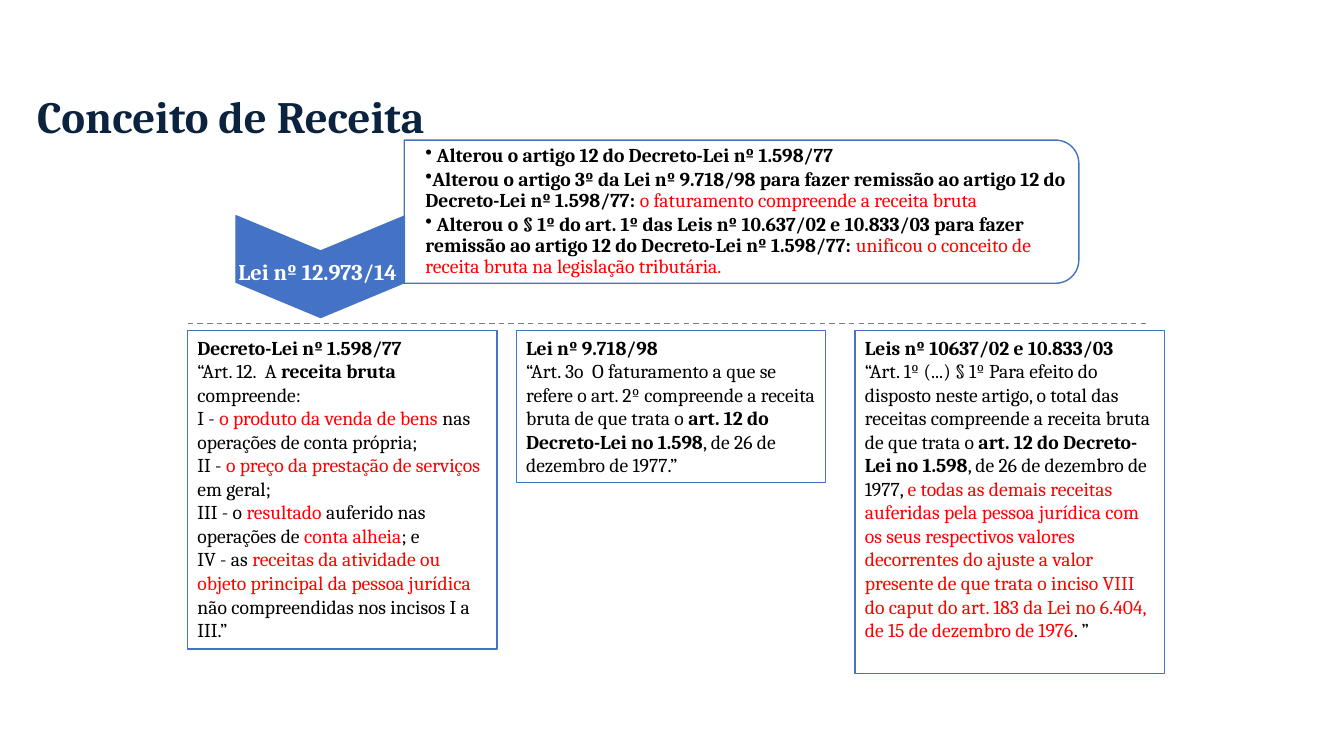
import math
from dataclasses import dataclass

from lxml import etree
from pptx import Presentation
from pptx import util as u
from pptx.dml.color import RGBColor
from pptx.enum import dml, shapes, text
from pptx.oxml import ns


@dataclass(frozen=True)
class Theme:
    font: str = "Cambria"
    navy: str = "0B233F"
    blue: str = "4472C4"
    gray: str = "7C7C7C"
    black: str = "000000"
    white: str = "FFFFFF"
    red: str = "FF0000"
    title_size: int = 32
    label_size: int = 16
    body_size: int = 14
    line_width: int = 1


THEME = Theme()


def bold(content):
    return content, {"bold": True}


def plain(content):
    return content, {}


def red(content):
    return content, {"color": THEME.red}


AMENDMENTS = [
    [bold(" Alterou o artigo 12 do Decreto-Lei nº 1.598/77")],
    [bold("Alterou o artigo 3º da Lei nº 9.718/98 para fazer remissão ao artigo 12 do Decreto-Lei nº 1.598/77: "),
     red("o faturamento compreende a receita bruta")],
    [bold(" Alterou o § 1º do art. 1º das Leis nº 10.637/02 e 10.833/03 para fazer remissão ao artigo 12 do Decreto-Lei nº 1.598/77: "),
     red("unificou o conceito de receita bruta na legislação tributária.")],
]

DECREE_LAW = [
    [bold("Decreto-Lei nº 1.598/77")],
    [plain("“Art. 12.  A "), bold("receita bruta "), plain("compreende:")],
    [plain("I - "), red("o produto da venda de bens "), plain("nas operações de conta própria;")],
    [plain("II - "), red("o preço da prestação de serviços "), plain("em geral;")],
    [plain("III - o "), red("resultado"), plain(" auferido nas operações de "),
     red("conta alheia"), plain("; e")],
    [plain("IV - as "), red("receitas da atividade ou objeto principal da pessoa jurídica"),
     plain(" não compreendidas nos incisos I a III.”")],
]

LAW_9718 = [
    [bold("Lei nº 9.718/98")],
    [plain("“Art. 3o  O faturamento a que se refere o art. 2º compreende a receita bruta de que trata o "),
     bold("art. 12 do Decreto-Lei no 1.598"), plain(", de 26 de dezembro de 1977.”")],
]

LAWS_10637_10833 = [
    [bold("Leis nº 10637/02 e 10.833/03")],
    [plain("“Art. 1º (...) § 1º Para efeito do disposto neste artigo, o total das receitas compreende a receita bruta de que trata o "),
     bold("art. 12 do Decreto-Lei no 1.598"), plain(", de 26 de dezembro de 1977, "),
     red("e todas as demais receitas auferidas pela pessoa jurídica com os seus respectivos valores decorrentes do ajuste a valor presente de que trata o inciso VIII do caput do art. 183 da Lei no 6.404, de 15 de dezembro de 1976"),
     plain(". ”")],
]


def write_text(shape, paragraphs, size=THEME.body_size, color=THEME.black,
               align=text.PP_ALIGN.LEFT, anchor=text.MSO_ANCHOR.TOP,
               insets=(0.1, 0.05, 0.1, 0.05), line_spacing=1.0, space_after=0, bullet=None):
    frame = shape.text_frame
    frame.word_wrap = True
    frame.vertical_anchor = anchor
    (frame.margin_left, frame.margin_top,
     frame.margin_right, frame.margin_bottom) = map(u.Inches, insets)
    for index, runs in enumerate(paragraphs):
        paragraph = frame.add_paragraph() if index else frame.paragraphs[0]
        paragraph.alignment = align
        paragraph.line_spacing = line_spacing
        paragraph.space_after = u.Pt(space_after)
        if bullet:
            properties = paragraph._p.get_or_add_pPr()
            properties.set("marL", "0")
            properties.set("indent", "0")
            etree.SubElement(properties, ns.qn("a:buChar")).set("char", bullet)
        for content, style in runs:
            run = paragraph.add_run()
            run.text = content
            run.font.name = THEME.font
            run.font.size = u.Pt(size)
            run.font.bold = style.get("bold", False)
            run.font.color.rgb = RGBColor.from_string(style.get("color", color))


def paint(shape, fill, opacity=100):
    shape.shadow.inherit = False
    shape.fill.solid()
    shape.fill.fore_color.rgb = RGBColor.from_string(fill)
    if opacity < 100:
        color = shape._element.spPr.find(".//" + ns.qn("a:srgbClr"))
        etree.SubElement(color, ns.qn("a:alpha")).set("val", str(opacity * 1000))
    shape.line.color.rgb = RGBColor.from_string(THEME.blue)
    shape.line.width = u.Pt(THEME.line_width)


def add_outline(slide, points, fill, opacity=100):
    corners = [(u.Inches(x), u.Inches(y)) for x, y in points]
    builder = slide.shapes.build_freeform(*corners[0])
    builder.add_line_segments(corners[1:], close=True)
    shape = builder.convert_to_shape()
    paint(shape, fill, opacity)
    return shape


def add_chevron(slide, left, top, width, height, notch):
    right, middle, bottom = left + width, left + width / 2, top + height
    points = [(left, top), (middle, top + notch), (right, top),
              (right, bottom - notch), (middle, bottom), (left, bottom - notch)]
    return add_outline(slide, points, THEME.blue)


def add_right_rounded_panel(slide, left, top, width, height, radius, steps=16):
    right, bottom = left + width, top + height
    angles = [math.pi / 2 * step / steps for step in range(steps + 1)]
    upper = [(right - radius + radius * math.sin(angle),
              top + radius - radius * math.cos(angle)) for angle in angles]
    lower = [(x, top + bottom - y) for x, y in reversed(upper)]
    return add_outline(slide, [(left, top), *upper, *lower, (left, bottom)], THEME.white, 90)


def add_label(slide, left, top, width, height, content, **style):
    box = slide.shapes.add_textbox(*map(u.Inches, (left, top, width, height)))
    write_text(box, [[bold(content)]], line_spacing=0.9, **style)


def add_law_box(slide, left, top, width, height, paragraphs):
    box = slide.shapes.add_shape(shapes.MSO_SHAPE.RECTANGLE,
                                 *map(u.Inches, (left, top, width, height)))
    paint(box, THEME.white)
    write_text(box, paragraphs)


def add_divider(slide, left, right, y):
    line = slide.shapes.add_connector(shapes.MSO_CONNECTOR.STRAIGHT,
                                      *map(u.Inches, (left, y, right, y)))
    line.line.color.rgb = RGBColor.from_string(THEME.gray)
    line.line.width = u.Pt(THEME.line_width)
    line.line.dash_style = dml.MSO_LINE.DASH
    etree.SubElement(line._element.spPr, ns.qn("a:effectLst"))


def main():
    presentation = Presentation()
    presentation.slide_width = u.Inches(13.33)
    presentation.slide_height = u.Inches(7.5)
    slide = presentation.slides.add_slide(presentation.slide_layouts[6])

    add_chevron(slide, 2.34, 2.14, 1.68, 1.01, notch=0.35)
    panel = add_right_rounded_panel(slide, 4.01, 1.39, 6.69, 1.42, radius=0.23)
    write_text(panel, AMENDMENTS, anchor=text.MSO_ANCHOR.MIDDLE,
               insets=(0.21, 0.07, 0.07, 0.07), line_spacing=0.9, space_after=2.1, bullet="•")
    add_label(slide, 2.26, 2.54, 1.78, 0.34, "Lei nº 12.973/14", size=THEME.label_size,
              color=THEME.white, align=text.PP_ALIGN.CENTER)
    add_label(slide, 0.27, 0.85, 9, 0.66, "Conceito de Receita", size=THEME.title_size,
              color=THEME.navy, anchor=text.MSO_ANCHOR.MIDDLE)
    add_divider(slide, 1.86, 11.39, 3.21)
    for left, height, paragraphs in ((1.86, 3.16, DECREE_LAW), (5.12, 1.51, LAW_9718),
                                     (8.48, 3.4, LAWS_10637_10833)):
        add_law_box(slide, left, 3.28, 3.07, height, paragraphs)

    presentation.save("out.pptx")


if __name__ == "__main__":
    main()
